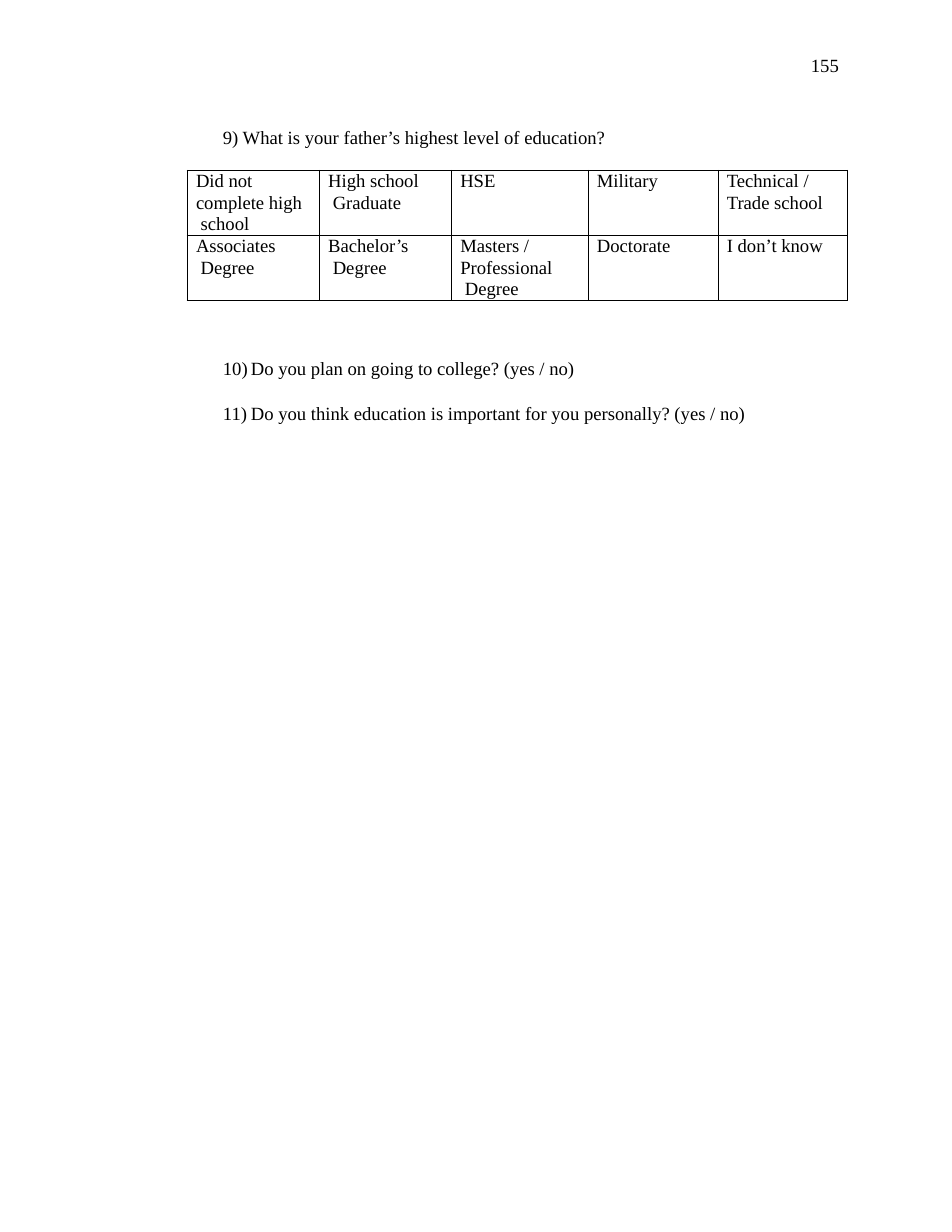
from lxml import etree
from pptx import Presentation
from pptx.dml.color import RGBColor
from pptx.oxml.ns import qn
from pptx.util import Inches, Pt

# Content
PAGE_NUMBER = "155"
TABLE_QUESTION = "9) What is your father’s highest level of education?"
EDUCATION_LEVELS = [
    ["Did not\vcomplete high\v school", "High school\v Graduate", "HSE",
     "Military", "Technical /\vTrade school"],
    ["Associates\v Degree", "Bachelor’s\v Degree",
     "Masters /\vProfessional\v Degree", "Doctorate", "I don’t know"],
]
CLOSING_QUESTIONS = [
    "Do you plan on going to college? (yes / no)",
    "Do you think education is important for you personally? (yes / no)",
]
FIRST_CLOSING_NUMBER = 10

# Layout in inches
TEXT_LEFT = 1.99
TABLE_LEFT, TABLE_TOP = 1.67, 1.52
COLUMN_WIDTHS = [1.18, 1.18, 1.22, 1.16, 1.16]
ROW_HEIGHT = 0.58
CELL_INDENT = 0.08
NUMBER_INDENT = 0.25

FONT = "Times New Roman"
BLACK = RGBColor(0, 0, 0)


def style_paragraph(paragraph, before=0, line_spacing=None):
    paragraph.space_before = Pt(before)
    if line_spacing:
        paragraph.line_spacing = Pt(line_spacing)
    for run in paragraph.runs:
        run.font.name = FONT
        run.font.size = Pt(12)
        run.font.color.rgb = BLACK


def add_text(slide, content, left, top, width, height):
    box = slide.shapes.add_textbox(*map(Inches, (left, top, width, height)))
    frame = box.text_frame
    frame.margin_left = frame.margin_right = frame.margin_bottom = 0
    frame.margin_top = Inches(0.01)
    frame.word_wrap = True
    frame.text = content
    for index, paragraph in enumerate(frame.paragraphs):
        style_paragraph(paragraph, before=14.5 if index else 1)
    return frame


def number_paragraph(paragraph, start):
    properties = paragraph._p.get_or_add_pPr()
    properties.set("marL", str(Inches(NUMBER_INDENT)))
    properties.set("indent", str(-Inches(NUMBER_INDENT)))
    etree.SubElement(properties, qn("a:buAutoNum"),
                     type="arabicParenR", startAt=str(start))


def border_cell(cell):
    properties = cell._tc.get_or_add_tcPr()
    for side in ("lnL", "lnR", "lnT", "lnB"):
        line = etree.SubElement(properties, qn(f"a:{side}"), w=str(Pt(0.5)))
        fill = etree.SubElement(line, qn("a:solidFill"))
        etree.SubElement(fill, qn("a:srgbClr"), val=str(BLACK))


def add_level_table(slide):
    rows, columns = len(EDUCATION_LEVELS), len(COLUMN_WIDTHS)
    table = slide.shapes.add_table(
        rows, columns, Inches(TABLE_LEFT), Inches(TABLE_TOP),
        Inches(sum(COLUMN_WIDTHS)), Inches(rows * ROW_HEIGHT)).table
    table.first_row = table.horz_banding = False
    for column, width in zip(table.columns, COLUMN_WIDTHS):
        column.width = Inches(width)
    for row, levels in zip(table.rows, EDUCATION_LEVELS):
        row.height = Inches(ROW_HEIGHT)
        for cell, level in zip(row.cells, levels):
            cell.margin_left = Inches(CELL_INDENT)
            cell.margin_right = cell.margin_top = cell.margin_bottom = 0
            border_cell(cell)
            cell.fill.background()
            paragraph = cell.text_frame.paragraphs[0]
            paragraph.text = level
            style_paragraph(paragraph, line_spacing=13.8)


def main():
    presentation = Presentation()
    presentation.slide_width = Inches(8.5)
    presentation.slide_height = Inches(11)
    slide = presentation.slides.add_slide(presentation.slide_layouts[6])

    # Page number and the question above the table
    add_text(slide, PAGE_NUMBER, 7.24, 0.47, 0.28, 0.23)
    add_text(slide, TABLE_QUESTION, TEXT_LEFT, 1.11, 3.52, 0.23)

    # Answer choices
    add_level_table(slide)

    # Numbered closing questions
    frame = add_text(slide, "\n".join(CLOSING_QUESTIONS),
                     TEXT_LEFT, 3.18, 4.75, 0.61)
    for paragraph in frame.paragraphs:
        number_paragraph(paragraph, FIRST_CLOSING_NUMBER)

    presentation.save("out.pptx")


if __name__ == "__main__":
    main()
